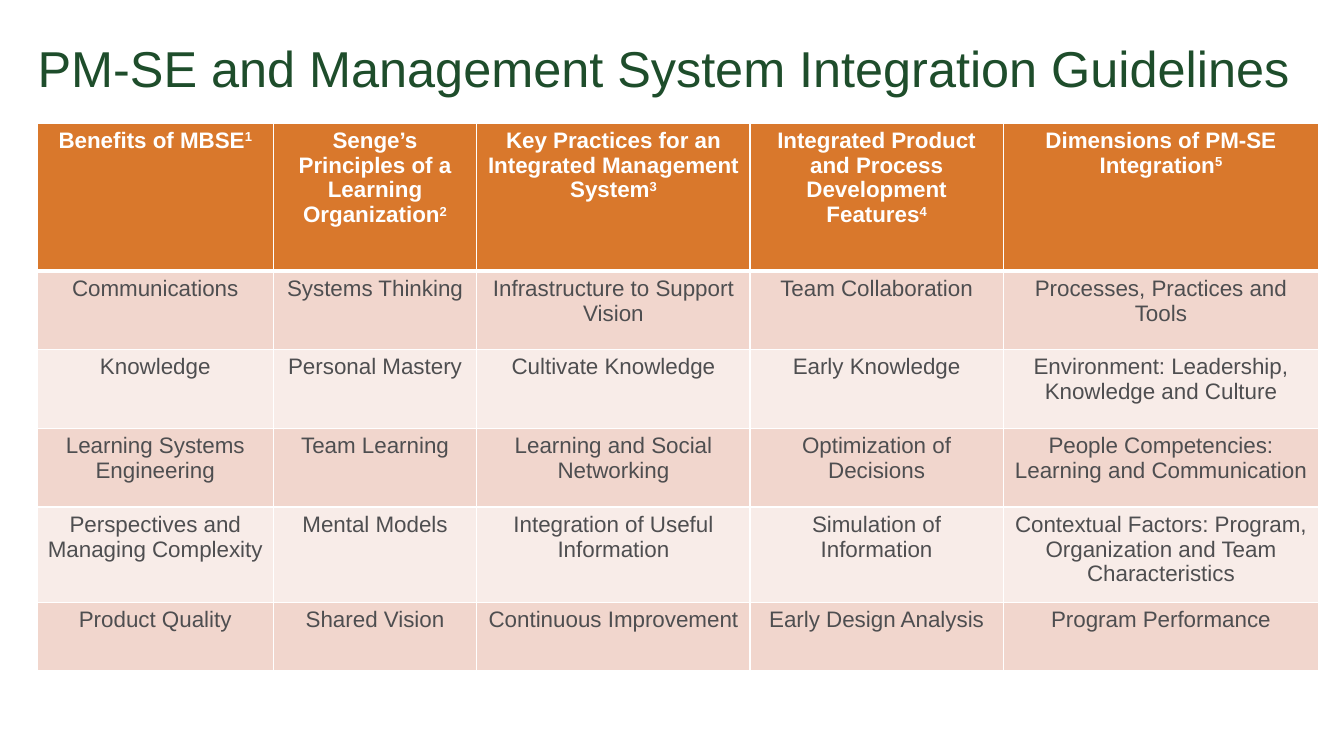
from dataclasses import dataclass

from lxml import etree
from pptx import Presentation
from pptx.dml.color import RGBColor
from pptx.enum.text import MSO_ANCHOR, MSO_AUTO_SIZE, PP_ALIGN
from pptx.oxml.ns import qn
from pptx.util import Inches, Pt

CENTER = PP_ALIGN.CENTER
TOP, BOTTOM = MSO_ANCHOR.TOP, MSO_ANCHOR.BOTTOM
NO_AUTOFIT = MSO_AUTO_SIZE.NONE
TITLE_ONLY = 5


@dataclass(frozen=True)
class Theme:
    font: str = "Arial"
    title_size: int = 36
    cell_size: int = 16
    title: str = "1E4D2B"
    header: str = "D9782C"
    header_text: str = "FFFFFF"
    body_text: str = "4E4E50"
    bands: tuple[str, str] = ("F1D6CD", "F8ECE8")
    border: str = "FFFFFF"
    thin: int = 1
    thick: int = 3


@dataclass(frozen=True)
class Grid:
    """Column widths and row heights in inches."""
    left: float = 0.37
    top: float = 1.22
    cols: tuple[float, ...] = (2.34, 2.02, 2.71, 2.51, 3.13)
    rows: tuple[float, ...] = (1.47, 0.78, 0.78, 0.78, 0.95, 0.67)

    @property
    def width(self) -> float:
        return sum(self.cols)

    @property
    def height(self) -> float:
        return sum(self.rows)


@dataclass(frozen=True)
class Guideline:
    """One column: its heading, whose note number is its position, and its entries."""
    heading: str
    entries: tuple[str, ...]


THEME = Theme()
GRID = Grid()
TITLE = "PM-SE and Management System Integration Guidelines"
GUIDELINES = (
    Guideline("Benefits of MBSE", (
        "Communications", "Knowledge", "Learning Systems Engineering",
        "Perspectives and Managing Complexity", "Product Quality")),
    Guideline("Senge’s Principles of a Learning Organization", (
        "Systems Thinking", "Personal Mastery", "Team Learning",
        "Mental Models", "Shared Vision")),
    Guideline("Key Practices for an Integrated Management System", (
        "Infrastructure to Support Vision", "Cultivate Knowledge",
        "Learning and Social Networking", "Integration of Useful Information",
        "Continuous Improvement")),
    Guideline("Integrated Product and Process Development Features", (
        "Team Collaboration", "Early Knowledge", "Optimization of Decisions",
        "Simulation of Information", "Early Design Analysis")),
    Guideline("Dimensions of PM-SE Integration", (
        "Processes, Practices and Tools",
        "Environment: Leadership, Knowledge and Culture",
        "People Competencies: Learning and Communication",
        "Contextual Factors: Program, Organization and Team Characteristics",
        "Program Performance")),
)


def add_run(p, text: str, size: int, color: str, bold: bool = False,
            raised: bool = False) -> None:
    r = p.add_run()
    r.text = text
    r.font.name = THEME.font
    r.font.size = Pt(size)
    r.font.bold = bold
    r.font.color.rgb = RGBColor.from_string(color)
    if raised:
        r.font._element.set("baseline", "30000")


def set_borders(cell, top: int, bottom: int) -> None:
    """Draw the four cell edges, with widths in points."""
    tc_pr = cell._tc.get_or_add_tcPr()
    edges = (("L", THEME.thin), ("R", THEME.thin), ("T", top), ("B", bottom))
    for place, (side, width) in enumerate(edges):
        ln = etree.Element(qn(f"a:ln{side}"), w=str(Pt(width)))
        fill = etree.SubElement(ln, qn("a:solidFill"))
        etree.SubElement(fill, qn("a:srgbClr"), val=THEME.border)
        tc_pr.insert(place, ln)


def fill_cell(cell, row: int, text: str, note: str = "") -> None:
    is_header = row == 0
    color = THEME.header_text if is_header else THEME.body_text
    back = THEME.header if is_header else THEME.bands[(row - 1) % 2]
    cell.fill.solid()
    cell.fill.fore_color.rgb = RGBColor.from_string(back)
    cell.vertical_anchor = TOP
    set_borders(cell, THEME.thick if row == 1 else THEME.thin,
                THEME.thick if is_header else THEME.thin)
    p = cell.text_frame.paragraphs[0]
    p.alignment = CENTER
    add_run(p, text, THEME.cell_size, color, is_header)
    if note:
        add_run(p, note, THEME.cell_size, color, is_header, raised=True)


def add_title(slide) -> None:
    sp = slide.shapes.title
    sp.left, sp.top = Inches(0.23), Inches(0.28)
    sp.width, sp.height = Inches(GRID.width), Inches(0.78)
    tf = sp.text_frame
    tf.word_wrap = True
    tf.auto_size = NO_AUTOFIT
    tf.vertical_anchor = BOTTOM
    tf.margin_left = tf.margin_right = Inches(0.09)
    tf.margin_top = tf.margin_bottom = Inches(0.09)
    p = tf.paragraphs[0]
    p.alignment = CENTER
    add_run(p, TITLE, THEME.title_size, THEME.title)


def add_guidelines(slide) -> None:
    table = slide.shapes.add_table(
        len(GRID.rows), len(GRID.cols), Inches(GRID.left), Inches(GRID.top),
        Inches(GRID.width), Inches(GRID.height)).table
    for row, height in zip(table.rows, GRID.rows):
        row.height = Inches(height)
    for col, (guideline, width) in enumerate(zip(GUIDELINES, GRID.cols)):
        table.columns[col].width = Inches(width)
        fill_cell(table.cell(0, col), 0, guideline.heading, str(col + 1))
        for row, entry in enumerate(guideline.entries, start=1):
            fill_cell(table.cell(row, col), row, entry)


def main() -> None:
    prs = Presentation()
    prs.slide_width, prs.slide_height = Inches(13.33), Inches(7.5)
    slide = prs.slides.add_slide(prs.slide_layouts[TITLE_ONLY])
    add_title(slide)
    add_guidelines(slide)
    prs.save("out.pptx")


if __name__ == "__main__":
    main()
